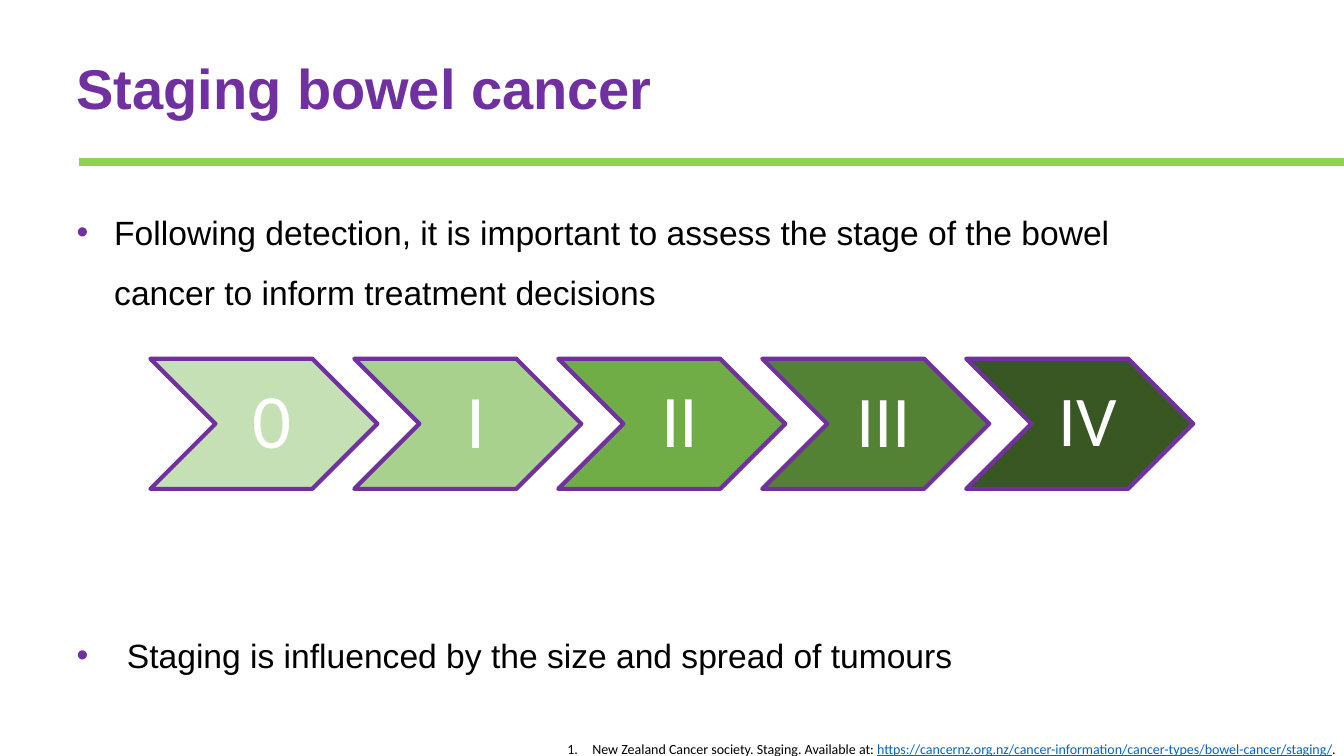
from dataclasses import dataclass

from lxml.etree import SubElement
from pptx import Presentation
from pptx.dml.color import RGBColor
from pptx.enum.shapes import MSO_CONNECTOR as Connector, MSO_SHAPE as Preset
from pptx.enum.text import MSO_ANCHOR as Anchor, MSO_AUTO_SIZE as AutoSize, PP_ALIGN as Align
from pptx.oxml.ns import qn
from pptx.util import Cm, Pt


@dataclass(frozen=True)
class Theme:
    heading_font: str = "Arial"
    label_font: str = "Calibri"
    purple: str = "7030A0"
    green: str = "92D050"
    black: str = "000000"
    white: str = "FFFFFF"
    link: str = "0563C1"
    title_size: int = 40
    body_size: int = 24
    stage_size: int = 55
    reference_size: int = 10


def write(paragraph, text, font, size, color, bold=False, underline=False):
    run = paragraph.add_run()
    run.text = text
    run.font.name = font
    run.font.size = Pt(size)
    run.font.color.rgb = RGBColor.from_string(color)
    run.font.bold = bold
    run.font.underline = underline


class StagingSlide:
    """Draws themed elements on one title-only slide."""

    def __init__(self, presentation, theme):
        self.theme = theme
        self.slide = presentation.slides.add_slide(presentation.slide_layouts[5])

    def frame(self, shape, anchor=Anchor.TOP, insets=(0.25, 0.13, 0.25, 0.13)):
        frame = shape.text_frame
        frame.word_wrap = True
        frame.auto_size = AutoSize.NONE
        frame.vertical_anchor = anchor
        (frame.margin_left, frame.margin_top,
         frame.margin_right, frame.margin_bottom) = map(Cm, insets)
        return frame.paragraphs[0]

    def marker(self, paragraph, tag, indent, color=None, **attributes):
        properties = paragraph._p.get_or_add_pPr()
        properties.set("marL", str(Cm(indent)))
        properties.set("indent", str(-Cm(indent)))
        if color:
            SubElement(SubElement(properties, qn("a:buClr")), qn("a:srgbClr"), val=color)
            SubElement(properties, qn("a:buFont"), typeface=self.theme.heading_font)
        SubElement(properties, qn(tag), **attributes)

    def title(self, text, left, top, width, height):
        shape = self.slide.shapes.title
        shape.left, shape.top, shape.width, shape.height = map(Cm, (left, top, width, height))
        paragraph = self.frame(shape)
        paragraph.alignment = Align.LEFT
        paragraph.line_spacing = 0.9
        write(paragraph, text, self.theme.heading_font, self.theme.title_size,
              self.theme.purple, bold=True)

    def rule(self, left, right, top):
        line = self.slide.shapes.add_connector(
            Connector.STRAIGHT, Cm(left), Cm(top), Cm(right), Cm(top))
        line.line.color.rgb = RGBColor.from_string(self.theme.green)
        line.line.width = Pt(5.5)
        SubElement(line._element.spPr, qn("a:effectLst"))

    def bullet(self, text, left, top, width, height, indent):
        box = self.slide.shapes.add_textbox(Cm(left), Cm(top), Cm(width), Cm(height))
        paragraph = self.frame(box)
        self.marker(paragraph, "a:buChar", indent, self.theme.purple, char="•")
        paragraph.line_spacing = 1.5
        write(paragraph, text, self.theme.heading_font, self.theme.body_size, self.theme.black)

    def shape(self, preset, fill, left, top, width, height):
        shape = self.slide.shapes.add_shape(preset, Cm(left), Cm(top), Cm(width), Cm(height))
        shape.shadow.inherit = False
        shape.fill.solid()
        shape.fill.fore_color.rgb = RGBColor.from_string(fill)
        return shape

    def stage(self, label, fill, size, left, top, width, height):
        chevron = self.shape(Preset.CHEVRON, fill, left, top, width, height)
        chevron.line.color.rgb = RGBColor.from_string(self.theme.purple)
        chevron.line.width = Pt(3)
        paragraph = self.frame(chevron, Anchor.MIDDLE, (0.6, 0.2, 0.2, 0.2))
        paragraph.alignment = Align.CENTER
        paragraph.line_spacing = 0.9
        write(paragraph, label, self.theme.label_font, size, self.theme.white)

    def reference(self, source, address, left, top, width, height):
        panel = self.shape(Preset.RECTANGLE, self.theme.white, left, top, width, height)
        panel.line.fill.background()
        color = panel._element.spPr.find(qn("a:solidFill")).find(qn("a:srgbClr"))
        SubElement(color, qn("a:alpha"), val="50000")
        paragraph = self.frame(panel)
        self.marker(paragraph, "a:buAutoNum", 0.63, type="arabicPeriod")
        paragraph.alignment = Align.RIGHT
        font, size = self.theme.label_font, self.theme.reference_size
        write(paragraph, source, font, size, self.theme.black)
        write(paragraph, address, font, size, self.theme.link, underline=True)
        write(paragraph, ".", font, size, self.theme.black)


def main():
    presentation = Presentation()
    presentation.slide_width, presentation.slide_height = Cm(33.87), Cm(19.05)
    theme = Theme()
    page = StagingSlide(presentation, theme)

    page.title("Staging bowel cancer", 1.68, 1.4, 29.2, 3.12)
    page.rule(1.98, 33.87, 4.09)
    page.bullet("Following detection, it is important to assess the stage of the bowel "
                "cancer to inform treatment decisions", 1.68, 4.7, 29.2, 3.4, indent=0.95)
    stages = {"0": "C5E0B4", "I": "A9D18E", "II": "70AD47", "III": "548235", "IV": "385723"}
    for index, (label, fill) in enumerate(stages.items()):
        page.stage(label, fill, theme.stage_size - index,
                   3.79 + index * 5.14, 9.04, 5.72, 3.28)
    page.bullet("Staging is influenced by the size and spread of tumours",
                1.68, 15.36, 29.2, 1.9, indent=1.27)
    page.reference("New Zealand Cancer society. Staging. Available at: ",
                   "https://cancernz.org.nz/cancer-information/cancer-types/bowel-cancer/staging/",
                   7.62, 18.52, 26.29, 0.69)

    presentation.save("out.pptx")


if __name__ == "__main__":
    main()
